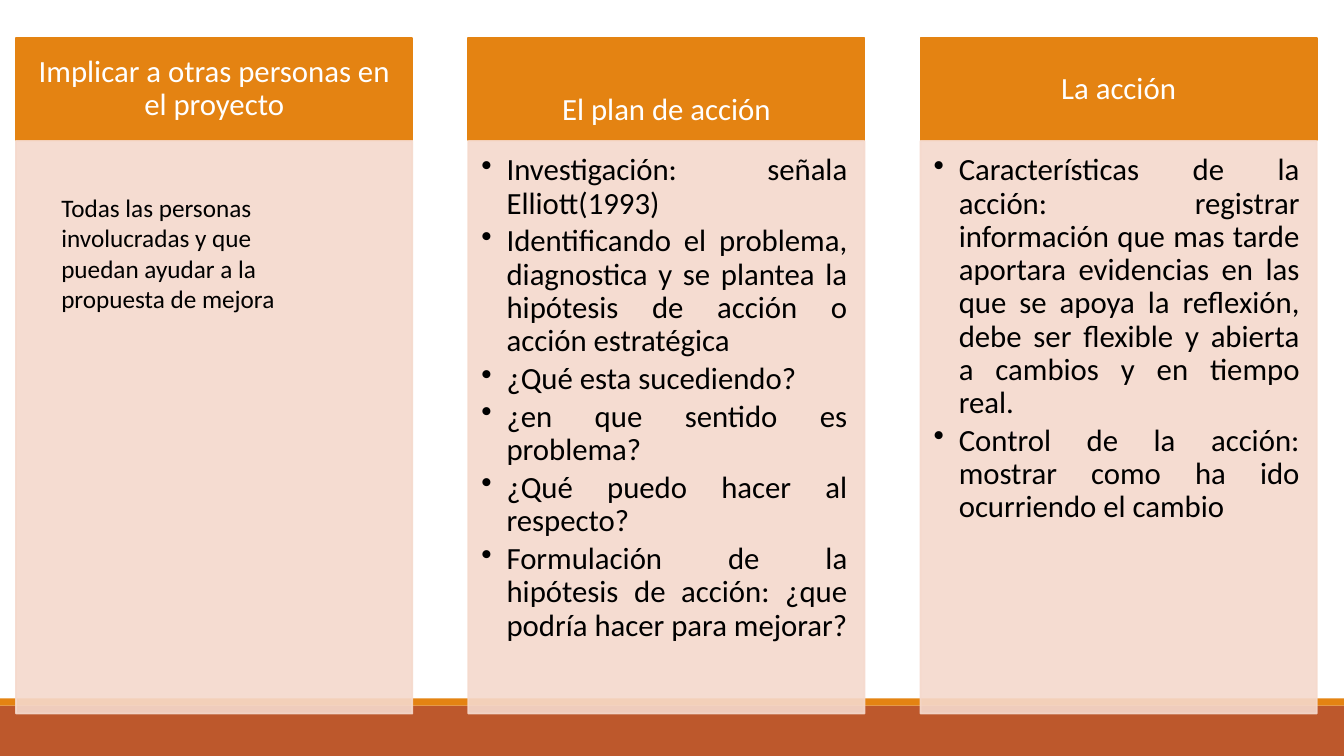
from lxml.etree import SubElement
from pptx import Presentation
from pptx.dml.color import RGBColor
from pptx.enum.shapes import MSO_SHAPE as Shape
from pptx.enum.text import MSO_ANCHOR as Anchor, PP_ALIGN as Align
from pptx.oxml.ns import qn
from pptx.util import Inches, Pt

ORANGE, RUST, PINK, WHITE, BLACK = "E48312", "BD582C", "F5D9CC", "FFFFFF", "000000"
WIDTH, HEIGHT = 13.33, 7.5

# header, inset above the header text, bullets
COLUMNS = [
    ("Implicar a otras personas en el proyecto", 0.1, []),
    ("El plan de acción", 0.53, [
        "Investigación: señala Elliott(1993)",
        "Identificando el problema, diagnostica y se plantea la hipótesis de acción"
        " o acción estratégica",
        "¿Qué esta sucediendo?",
        "¿en que sentido es problema?",
        "¿Qué puedo hacer al respecto?",
        "Formulación de la hipótesis de acción: ¿que podría hacer para mejorar?",
    ]),
    ("La acción", 0.1, [
        "Características de la acción: registrar información que mas tarde aportara"
        " evidencias en las que se apoya la reflexión, debe ser flexible y abierta"
        " a cambios y en tiempo real.",
        "Control de la acción: mostrar como ha ido ocurriendo el cambio",
    ]),
]
NOTE = "Todas las personas involucradas y que puedan ayudar a la propuesta de mejora"

LEFT, PITCH, COLUMN_WIDTH = 0.16, 4.485, 3.93
HEADER_TOP, HEADER_HEIGHT = 0.38, 1.01
BODY_TOP, BODY_HEIGHT = 1.4, 5.68
FOOTER_TOP, STRIPE_HEIGHT = 7, 0.07

HEADER_FORMAT = {"alignment": Align.CENTER, "line_spacing": 0.9}
BULLET_FORMAT = {"alignment": Align.JUSTIFY, "line_spacing": 0.9, "space_after": Pt(3.3)}


def color(hex_string):
    return RGBColor.from_string(hex_string)


def add_box(slide, at, fill, line=None, alpha=None):
    """Add a plain rectangle; alpha is the opacity in percent."""
    shape = slide.shapes.add_shape(Shape.RECTANGLE, *map(Inches, at))
    shape.shadow.inherit = False
    shape.fill.solid()
    shape.fill.fore_color.rgb = color(fill)
    if line:
        shape.line.color.rgb = color(line)
        shape.line.width = Pt(1.25)
    else:
        shape.line.fill.background()
    if alpha:
        for element in shape._element.spPr.iter(qn("a:srgbClr")):
            SubElement(element, qn("a:alpha"), val=str(alpha * 1000))
    return shape


def add_bullet(paragraph):
    properties = paragraph._p.get_or_add_pPr()
    properties.set("marL", str(Inches(0.25)))
    properties.set("indent", str(-Inches(0.25)))
    SubElement(properties, qn("a:buChar"), char="•")


def write(shape, lines, insets, anchor, size, text_color, formats, bullets=False):
    """Fill a shape with paragraphs; insets run left, top, right, bottom."""
    frame = shape.text_frame
    frame.word_wrap = True
    frame.vertical_anchor = anchor
    for side, inset in zip(("left", "top", "right", "bottom"), insets):
        setattr(frame, f"margin_{side}", Inches(inset))
    for index, line in enumerate(lines):
        paragraph = frame.add_paragraph() if index else frame.paragraphs[0]
        paragraph.text = line
        if bullets:
            add_bullet(paragraph)
        for name, value in formats.items():
            setattr(paragraph, name, value)
        font = paragraph.runs[0].font
        font.name, font.size = "Calibri", Pt(size)
        font.color.rgb = color(text_color)


def main():
    presentation = Presentation()
    presentation.slide_width, presentation.slide_height = Inches(WIDTH), Inches(HEIGHT)
    slide = presentation.slides.add_slide(presentation.slide_layouts[6])

    add_box(slide, (0, FOOTER_TOP, WIDTH, HEIGHT - FOOTER_TOP), RUST)
    add_box(slide, (0, FOOTER_TOP - STRIPE_HEIGHT, WIDTH, STRIPE_HEIGHT), ORANGE)

    for index, (title, top_inset, bullets) in enumerate(COLUMNS):
        left = LEFT + index * PITCH
        header = add_box(slide, (left, HEADER_TOP, COLUMN_WIDTH, HEADER_HEIGHT),
                         ORANGE, ORANGE)
        write(header, [title], (0.17, top_inset, 0.17, 0.1), Anchor.MIDDLE, 22, WHITE,
              HEADER_FORMAT)
        body = add_box(slide, (left, BODY_TOP, COLUMN_WIDTH, BODY_HEIGHT), PINK, PINK, 90)
        if bullets:
            write(body, bullets, (0.13, 0.13, 0.17, 0.19), Anchor.TOP, 22, BLACK,
                  BULLET_FORMAT, bullets=True)

    note = slide.shapes.add_textbox(*map(Inches, (0.51, 1.86, 2.8, 1.62)))
    write(note, [NOTE], (0.1, 0.05, 0.1, 0.05), Anchor.TOP, 18, BLACK, {})
    presentation.save("out.pptx")


if __name__ == "__main__":
    main()
